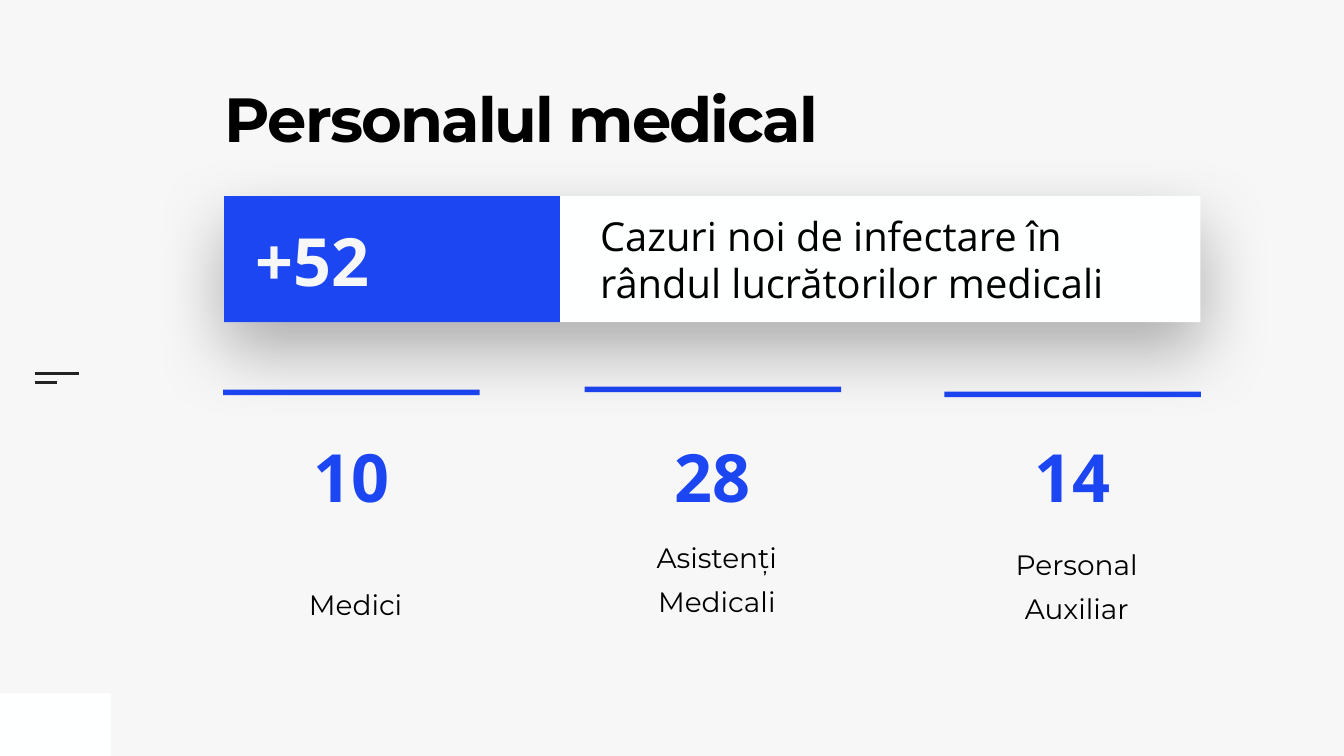
from dataclasses import dataclass

from lxml.etree import SubElement
from pptx import Presentation
from pptx.dml.color import RGBColor
from pptx.enum.shapes import MSO_CONNECTOR, MSO_SHAPE
from pptx.enum.text import MSO_ANCHOR, PP_ALIGN
from pptx.oxml.ns import qn
from pptx.shapes.autoshape import Shape
from pptx.slide import Slide
from pptx.util import Inches, Pt


@dataclass(frozen=True)
class Theme:
    background: str = "F7F7F7"
    panel: str = "FEFFFF"
    accent: str = "1D46F3"
    text: str = "000000"
    rule: str = "222222"
    heading_font: str = "Montserrat"
    body_font: str = "Open Sans"
    title_size: int = 89
    number_size: int = 95
    message_size: int = 57
    label_size: int = 40


@dataclass(frozen=True)
class Box:
    left: float
    top: float
    width: float
    height: float

    def lengths(self) -> list[int]:
        return [Inches(value) for value in (self.left, self.top, self.width, self.height)]


@dataclass(frozen=True)
class StaffGroup:
    number: str
    label: str
    left: float
    card_top: float
    bar_top: float


THEME = Theme()
COLUMN_WIDTH = 5.09
CARD_HEIGHT = 5.46
BAR_HEIGHT = 0.11
NUMBER_TOP = 8.54
NUMBER_HEIGHT = 1.8
EVEN_MARGINS = (0.1, 0.1, 0.1, 0.1)
CARD_MARGINS = (0.55, 0.71, 0.39, 0.87)
STAFF_GROUPS = [
    StaffGroup("10", "Medici", 4.43, 7.73, 7.73),
    StaffGroup("28", "Asistenți Medicali", 11.6, 7.67, 7.67),
    StaffGroup("14", "Personal Auxiliar", 18.74, 7.81, 7.77),
]


def add_rectangle(slide: Slide, box: Box, color: str) -> Shape:
    shape = slide.shapes.add_shape(MSO_SHAPE.RECTANGLE, *box.lengths())
    shape.shadow.inherit = False
    shape.fill.solid()
    shape.fill.fore_color.rgb = RGBColor.from_string(color)
    shape.line.fill.background()
    return shape


def add_rule(slide: Slide, left: float, right: float, top: float) -> None:
    rule = slide.shapes.add_connector(
        MSO_CONNECTOR.STRAIGHT, Inches(left), Inches(top), Inches(right), Inches(top))
    rule.line.color.rgb = RGBColor.from_string(THEME.rule)
    rule.line.width = Pt(3)
    SubElement(rule._element.spPr, qn("a:effectLst"))


def write_text(shape: Shape, text: str, font: dict, color: str, paragraph_format: dict,
               anchor: MSO_ANCHOR = MSO_ANCHOR.MIDDLE,
               margins: tuple[float, ...] = EVEN_MARGINS) -> None:
    frame = shape.text_frame
    frame.word_wrap = True
    frame.vertical_anchor = anchor
    for side, margin in zip(("left", "top", "right", "bottom"), margins):
        setattr(frame, f"margin_{side}", Inches(margin))
    paragraph = frame.paragraphs[0]
    for name, value in paragraph_format.items():
        setattr(paragraph, name, value)
    run = paragraph.add_run()
    run.text = text
    for name, value in font.items():
        setattr(run.font, name, value)
    run.font.color.rgb = RGBColor.from_string(color)


def add_text(slide: Slide, box: Box, text: str, font: dict, color: str,
             alignment: PP_ALIGN = PP_ALIGN.LEFT) -> None:
    shape = slide.shapes.add_textbox(*box.lengths())
    write_text(shape, text, font, color, {"alignment": alignment})


def add_soft_shadow(shape: Shape) -> None:
    effects = shape._element.spPr.find(qn("a:effectLst"))
    shadow = SubElement(effects, qn("a:outerShdw"), blurRad=str(Pt(100)),
                        dist=str(Pt(40)), dir="5400000", rotWithShape="0")
    color = SubElement(shadow, qn("a:srgbClr"), val=THEME.text)
    SubElement(color, qn("a:alpha"), val="30000")


def add_title(slide: Slide, text: str) -> None:
    title = slide.shapes.title
    title.left, title.top, title.width, title.height = Box(4.46, 1.87, 13.01, 2.73).lengths()
    font = {"name": THEME.heading_font, "size": Pt(THEME.title_size), "bold": True}
    write_text(title, text, font, THEME.text,
               {"alignment": PP_ALIGN.LEFT, "line_spacing": 0.8},
               MSO_ANCHOR.TOP, (0, 0, 0, 0))
    # Tight letter spacing
    title.text_frame.paragraphs[0].runs[0]._r.get_or_add_rPr().set("spc", "-270")


def add_staff_group(slide: Slide, group: StaffGroup) -> None:
    card = add_rectangle(
        slide, Box(group.left, group.card_top, COLUMN_WIDTH, CARD_HEIGHT), THEME.background)
    write_text(card, group.label,
               {"name": THEME.heading_font, "size": Pt(THEME.label_size)}, THEME.text,
               {"alignment": PP_ALIGN.CENTER, "line_spacing": 1.3, "space_before": Pt(20)},
               MSO_ANCHOR.BOTTOM, CARD_MARGINS)
    add_rectangle(slide, Box(group.left, group.bar_top, COLUMN_WIDTH, BAR_HEIGHT), THEME.accent)


def main() -> None:
    presentation = Presentation()
    presentation.slide_width = Inches(26.67)
    presentation.slide_height = Inches(15)
    slide = presentation.slides.add_slide(presentation.slide_layouts[5])
    slide.background.fill.solid()
    slide.background.fill.fore_color.rgb = RGBColor.from_string(THEME.background)
    number_font = {"name": THEME.body_font, "size": Pt(THEME.number_size), "bold": True}
    message_font = {"name": THEME.body_font, "size": Pt(THEME.message_size)}

    # Margin decoration
    add_rectangle(slide, Box(0, 13.76, 2.2, 1.24), THEME.panel)
    add_rule(slide, 0.69, 1.57, 7.41)
    add_rule(slide, 0.69, 1.13, 7.59)

    add_title(slide, "Personalul medical")

    # Staff cards
    for group in STAFF_GROUPS:
        add_staff_group(slide, group)

    # Banner with the total, its shadow falling over the cards
    banner = add_rectangle(slide, Box(4.45, 3.89, 19.37, 2.5), THEME.panel)
    add_soft_shadow(banner)
    add_text(slide, Box(11.81, 4.08, 11.76, 2.12),
             "Cazuri noi de infectare în rândul lucrătorilor medicali",
             message_font, THEME.text)
    add_rectangle(slide, Box(4.45, 3.89, 6.66, 2.5), THEME.accent)
    add_text(slide, Box(4.98, 4.25, 6.03, NUMBER_HEIGHT), "+52", number_font, THEME.background)

    # Staff numbers
    for group in STAFF_GROUPS:
        add_text(slide, Box(group.left, NUMBER_TOP, COLUMN_WIDTH, NUMBER_HEIGHT),
                 group.number, number_font, THEME.accent, PP_ALIGN.CENTER)

    presentation.save("out.pptx")


if __name__ == "__main__":
    main()
